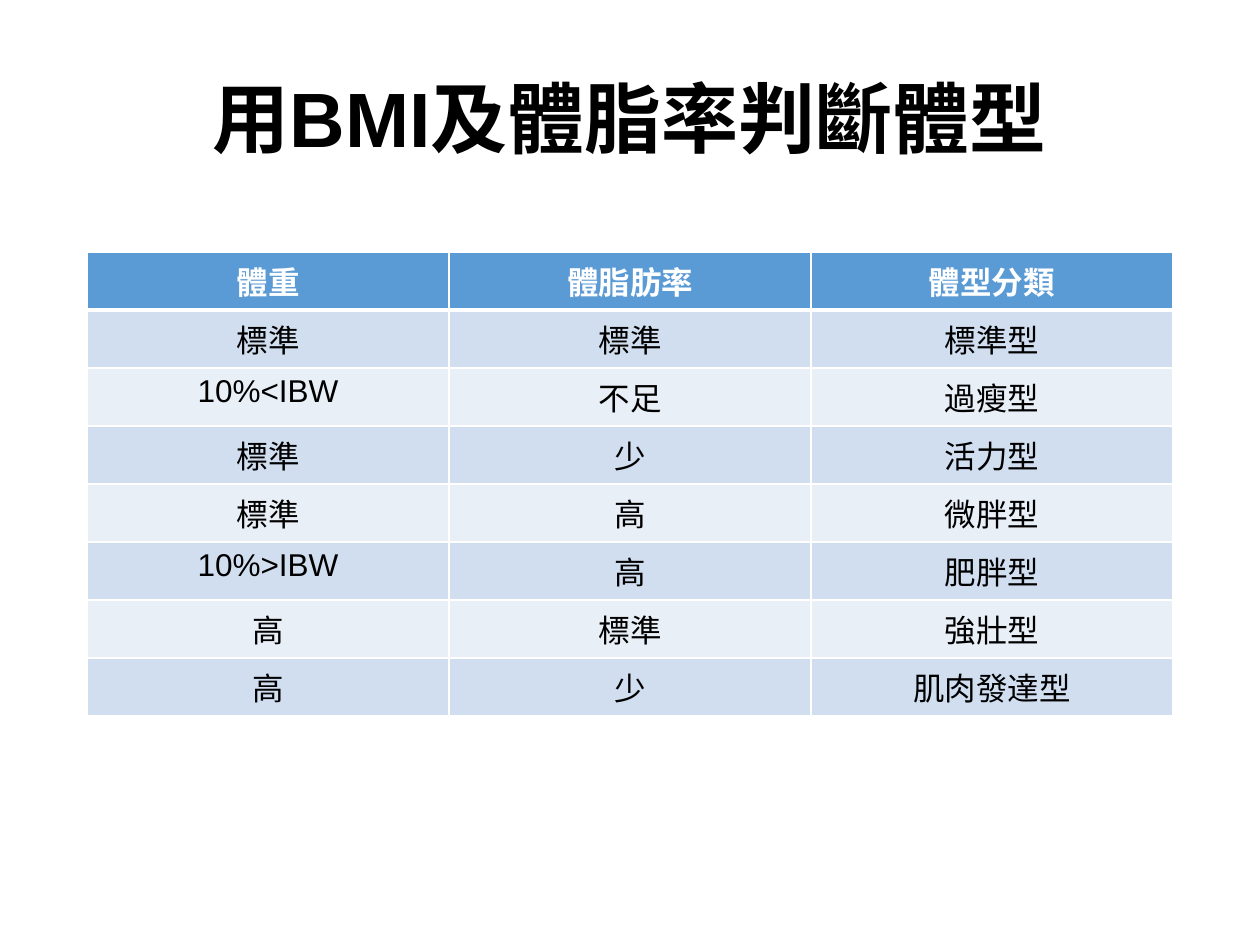
from dataclasses import dataclass
from lxml.etree import SubElement
from pptx import Presentation
from pptx.dml.color import RGBColor
from pptx.enum.text import MSO_ANCHOR, PP_ALIGN
from pptx.oxml.ns import qn
from pptx.util import Emu, Pt

SCALE = 914400 / 126
WHITE = RGBColor(0xFF, 0xFF, 0xFF)
BLACK = RGBColor(0x00, 0x00, 0x00)
BLUE = RGBColor(0x5B, 0x9B, 0xD5)
BANDS = (RGBColor(0xE9, 0xEF, 0xF7), RGBColor(0xD0, 0xDE, 0xEF))


@dataclass
class Entry:
    weight: str
    fat: str
    body: str


HEADER = Entry("體重", "體脂肪率", "體型分類")
ENTRIES = [
    Entry("標準", "標準", "標準型"),
    Entry("10%<IBW", "不足", "過瘦型"),
    Entry("標準", "少", "活力型"),
    Entry("標準", "高", "微胖型"),
    Entry("10%>IBW", "高", "肥胖型"),
    Entry("高", "標準", "強壯型"),
    Entry("高", "少", "肌肉發達型"),
]


def px(count: int) -> Emu:
    return Emu(round(count * SCALE))


def write(frame, text: str, size: int, color: RGBColor, bold: bool) -> None:
    frame.text = text
    line = frame.paragraphs[0]
    line.alignment = PP_ALIGN.CENTER
    font = line.runs[0].font
    font.name = "Arial"
    font.size = Pt(size)
    font.bold = bold
    font.color.rgb = color


def border(cell, top: int, bottom: int) -> None:
    props = cell._tc.get_or_add_tcPr()
    for side, width in (("L", 1), ("R", 1), ("T", top), ("B", bottom)):
        edge = SubElement(props, qn(f"a:ln{side}"), w=str(Pt(width)))
        fill = SubElement(edge, qn("a:solidFill"))
        SubElement(fill, qn("a:srgbClr"), val=str(WHITE))


def add_title(slide, text: str) -> None:
    box = slide.shapes.add_textbox(px(63), px(38), px(1134), px(158))
    frame = box.text_frame
    frame.word_wrap = True
    frame.vertical_anchor = MSO_ANCHOR.MIDDLE
    write(frame, text, 44, BLACK, True)


def add_grid(slide, entries: list[Entry]) -> None:
    wide, high = 362, 58
    count = len(entries)
    shape = slide.shapes.add_table(
        count, 3, px(87), px(252), px(3 * wide), px(count * high)
    )
    table = shape.table
    for row, entry in enumerate(entries):
        head = row == 0
        words = (entry.weight, entry.fat, entry.body)
        for col, text in enumerate(words):
            cell = table.cell(row, col)
            border(cell, 3 if row == 1 else 1, 3 if head else 1)
            cell.fill.solid()
            cell.fill.fore_color.rgb = BLUE if head else BANDS[row % 2]
            write(cell.text_frame, text, 18, WHITE if head else BLACK, head)


def main() -> None:
    deck = Presentation()
    deck.slide_width = px(1260)
    deck.slide_height = px(945)
    slide = deck.slides.add_slide(deck.slide_layouts[6])
    add_title(slide, "用BMI及體脂率判斷體型")
    add_grid(slide, [HEADER, *ENTRIES])
    deck.save("out.pptx")


if __name__ == "__main__":
    main()
